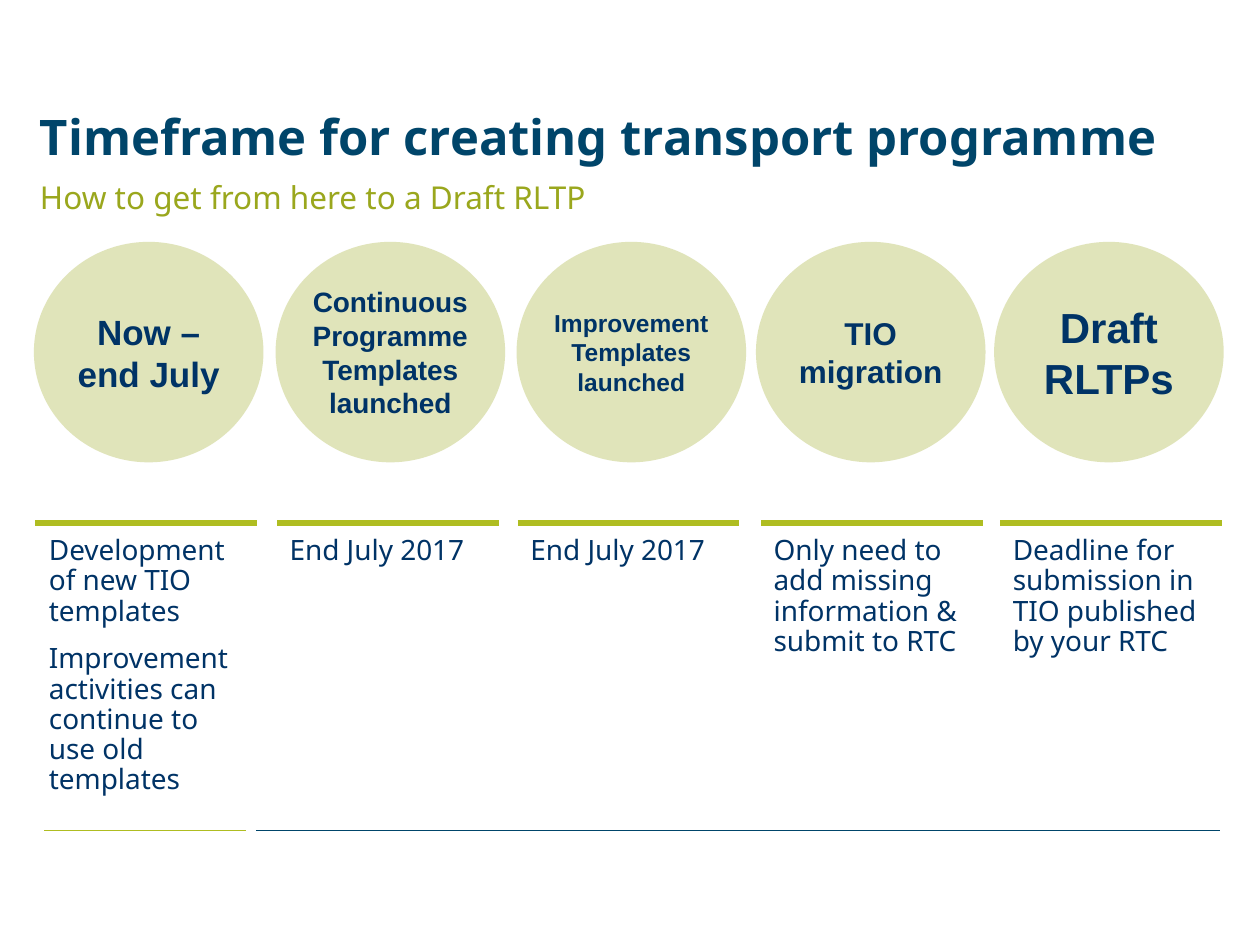
from dataclasses import dataclass

from lxml import etree
from pptx import Presentation
from pptx.dml.color import RGBColor
from pptx.enum.shapes import MSO_CONNECTOR as Connector, MSO_SHAPE as Shape
from pptx.enum.text import MSO_ANCHOR as Anchor, PP_ALIGN as Align
from pptx.oxml.ns import qn
from pptx.util import Pt

NAVY, TEAL, OLIVE, LIME = "003366", "00456A", "9AA71D", "AFBD21"


@dataclass
class Stage:
    circle_left: float
    rule_left: float
    text_left: float
    label: str
    label_size: float
    details: list[str]
    side_inset: float = 0


STAGES = [
    Stage(19.4, 20.2, 20.9, "Now – end July", 20,
          ["Development of new TIO templates",
           "Improvement activities can continue to use old templates"]),
    Stage(157.5, 158.4, 158.4, "Continuous Programme Templates launched", 16,
          ["End July 2017"]),
    Stage(295.2, 296, 296, "Improvement Templates launched", 14,
          ["End July 2017"]),
    Stage(432, 435, 435, "TIO migration", 18,
          ["Only need to add missing information & submit to RTC"]),
    Stage(568.1, 571.7, 571.7, "Draft RLTPs", 24,
          ["Deadline for submission in TIO published by your RTC"], 7.2),
]


def color(value: str) -> RGBColor:
    return RGBColor.from_string(value)


def style(paragraph, size: float, font: str, ink: str, bold: bool = False) -> None:
    for run in paragraph.runs:
        run.font.size = Pt(size)
        run.font.name = font
        run.font.bold = bold
        run.font.color.rgb = color(ink)


def add_line(slide, left: float, right: float, y: float, ink: str, width: float) -> None:
    line = slide.shapes.add_connector(
        Connector.STRAIGHT, Pt(left), Pt(y), Pt(right), Pt(y))
    line.line.color.rgb = color(ink)
    line.line.width = Pt(width)
    etree.SubElement(line._element.spPr, qn("a:effectLst"))


def add_text(slide, left: float, top: float, width: float, height: float,
             lines: list[str], size: float, ink: str, bold: bool = False,
             anchor: Anchor = Anchor.TOP) -> None:
    box = slide.shapes.add_textbox(Pt(left), Pt(top), Pt(width), Pt(height))
    frame = box.text_frame
    frame.word_wrap = True
    frame.vertical_anchor = anchor
    frame.text = "\n".join(lines)
    for index, paragraph in enumerate(frame.paragraphs):
        paragraph.line_spacing = 0.9
        paragraph.space_before = Pt(10 if index else 0)
        style(paragraph, size, "Noto Sans", ink, bold)


def add_circle(slide, stage: Stage) -> None:
    circle = slide.shapes.add_shape(
        Shape.OVAL, Pt(stage.circle_left), Pt(138.2), Pt(131.2), Pt(126))
    circle.shadow.inherit = False
    circle.line.fill.background()
    circle.fill.solid()
    circle.fill.fore_color.rgb = color(OLIVE)
    # 30 % opacity
    fill_color = circle._element.spPr.find(qn("a:solidFill"))[0]
    etree.SubElement(fill_color, qn("a:alpha"), val="30000")
    frame = circle.text_frame
    frame.word_wrap = True
    frame.vertical_anchor = Anchor.MIDDLE
    frame.margin_left = frame.margin_right = Pt(stage.side_inset)
    frame.text = stage.label
    paragraph = frame.paragraphs[0]
    paragraph.alignment = Align.CENTER
    style(paragraph, stage.label_size, "Arial", NAVY, True)


def main() -> None:
    presentation = Presentation()
    presentation.slide_width, presentation.slide_height = Pt(720), Pt(540)
    slide = presentation.slides.add_slide(presentation.slide_layouts[6])

    # Footer lines
    add_line(slide, 25.2, 140.4, 474.5, LIME, 0.75)
    add_line(slide, 146.2, 697, 474.5, TEAL, 0.75)

    # Headings
    add_text(slide, 15.8, 49, 679.7, 49.7, ["Timeframe for creating transport programme"],
             28, TEAL, True, Anchor.BOTTOM)
    add_text(slide, 15.8, 100.8, 679.7, 28, ["How to get from here to a Draft RLTP"],
             18, OLIVE)

    # Stages: rule, details and circle
    for stage in STAGES:
        add_line(slide, stage.rule_left, stage.rule_left + 126.5, 298.8, LIME, 3)
        add_text(slide, stage.text_left, 303.1, 126.7, 158.4, stage.details, 16, NAVY)
        add_circle(slide, stage)

    presentation.save("out.pptx")


if __name__ == "__main__":
    main()
